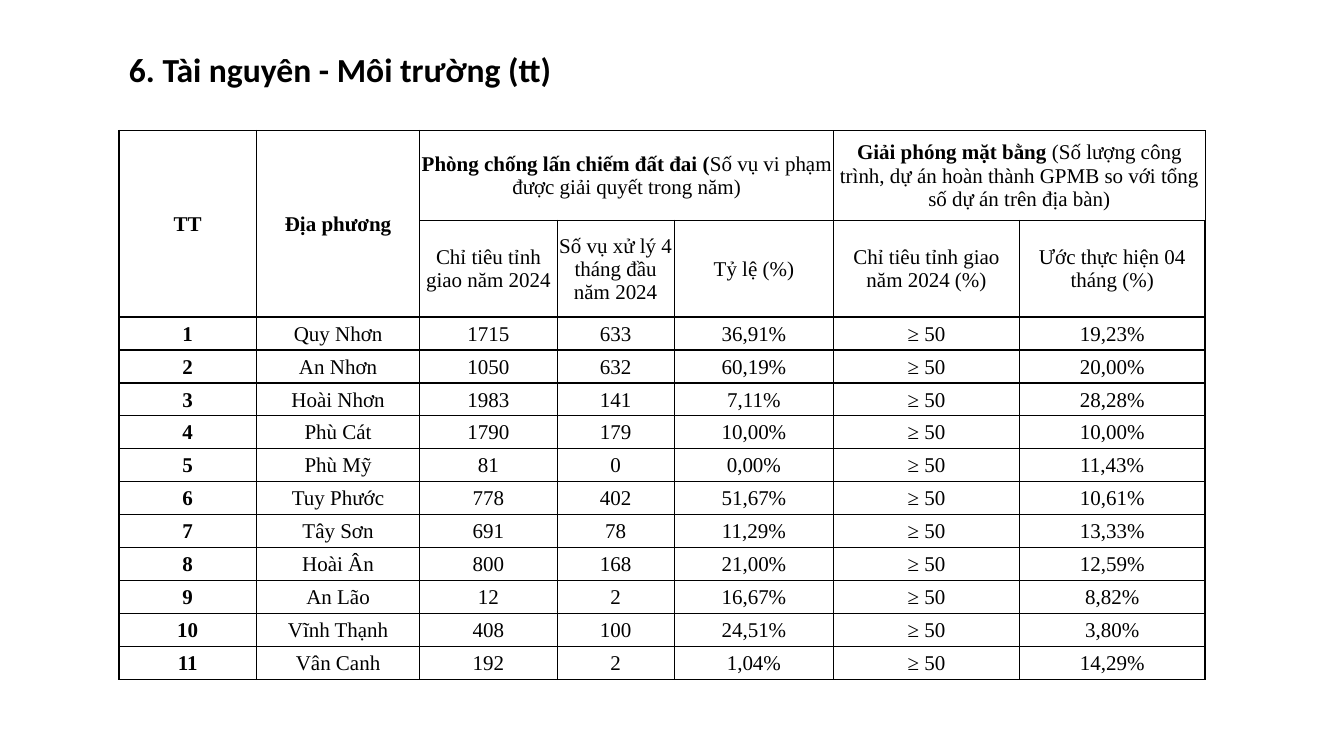
from lxml.etree import SubElement
from pptx import Presentation
from pptx.dml.color import RGBColor
from pptx.enum.text import MSO_ANCHOR as Anchor, MSO_AUTO_SIZE as AutoSize, PP_ALIGN as Align
from pptx.oxml.ns import qn
from pptx.util import Cm, Pt

COLUMN_WIDTHS = [3.46, 4.12, 3.46, 2.95, 4.02, 4.68, 4.68]
HEADER_HEIGHTS = [2.26, 2.44]
BODY_HEIGHT = 0.83
TARGET = "≥ 50"
LAND_COLUMN, CLEARANCE_COLUMN = 2, 5

# (row, column, rows spanned, columns spanned, bold text, regular text)
HEADERS = [
    (0, 0, 2, 1, "TT", ""),
    (0, 1, 2, 1, "Địa phương", ""),
    (0, LAND_COLUMN, 1, 3, "Phòng chống lấn chiếm đất đai (",
     "Số vụ vi phạm được giải quyết trong năm)"),
    (0, CLEARANCE_COLUMN, 1, 2, "Giải phóng mặt bằng ",
     "(Số lượng công trình, dự án hoàn thành GPMB so với tổng số dự án trên địa bàn)"),
    (1, 2, 1, 1, "", "Chỉ tiêu tỉnh giao năm 2024"),
    (1, 3, 1, 1, "", "Số vụ xử lý 4 tháng đầu năm 2024"),
    (1, 4, 1, 1, "", "Tỷ lệ (%)"),
    (1, 5, 1, 1, "", "Chỉ tiêu tỉnh giao năm 2024 (%)"),
    (1, 6, 1, 1, "", "Ước thực hiện 04 tháng (%)"),
]

# locality, cases assigned, cases handled, share handled, clearance achieved
LOCALITIES = [
    ("Quy Nhơn", "1715", "633", "36,91%", "19,23%"),
    ("An Nhơn", "1050", "632", "60,19%", "20,00%"),
    ("Hoài Nhơn", "1983", "141", "7,11%", "28,28%"),
    ("Phù Cát", "1790", "179", "10,00%", "10,00%"),
    ("Phù Mỹ", "81", "0", "0,00%", "11,43%"),
    ("Tuy Phước", "778", "402", "51,67%", "10,61%"),
    ("Tây Sơn", "691", "78", "11,29%", "13,33%"),
    ("Hoài Ân", "800", "168", "21,00%", "12,59%"),
    ("An Lão", "12", "2", "16,67%", "8,82%"),
    ("Vĩnh Thạnh", "408", "100", "24,51%", "3,80%"),
    ("Vân Canh", "192", "2", "1,04%", "14,29%"),
]


def color(value):
    return RGBColor.from_string(value)


def add_text(paragraph, text, *, font, size, ink, bold=False):
    run = paragraph.add_run()
    run.text = text
    run.font.name = font
    run.font.size = Pt(size)
    run.font.bold = bold
    run.font.color.rgb = color(ink)


def thin_sides(row, column):
    """Sides of a cell that touch the lighter frame of the clearance heading."""
    if row == 0 and column >= CLEARANCE_COLUMN:
        return "LRTB"
    if row == 0 and column >= LAND_COLUMN:
        return "R"
    if row == 1 and column >= CLEARANCE_COLUMN:
        return "T"
    return ""


class SlideBuilder:
    title_font = "Calibri"
    table_font = "Times New Roman"
    ink = "000000"
    paper = "FFFFFF"

    def __init__(self, slide):
        self.slide = slide

    def title(self, text, left, top, width, height):
        shape = self.slide.shapes.add_textbox(Cm(left), Cm(top), Cm(width), Cm(height))
        frame = shape.text_frame
        frame.word_wrap = True
        frame.auto_size = AutoSize.SHAPE_TO_FIT_TEXT
        add_text(frame.paragraphs[0], text, font=self.title_font, size=24,
                 ink=self.ink, bold=True)

    def table(self, left, top, widths, heights):
        shape = self.slide.shapes.add_table(
            len(heights), len(widths), Cm(left), Cm(top), Cm(sum(widths)), Cm(sum(heights)))
        table = shape.table
        table.first_row = table.horz_banding = False
        for column, width in zip(table.columns, widths):
            column.width = Cm(width)
        for row_index, (row, height) in enumerate(zip(table.rows, heights)):
            row.height = Cm(height)
            for column_index, cell in enumerate(row.cells):
                self.style_cell(cell, thin_sides(row_index, column_index))
        return table

    def style_cell(self, cell, thin):
        properties = cell._tc.get_or_add_tcPr()
        for side in "LRTB":
            width = Pt(0.5 if side in thin else 1)
            line = SubElement(properties, qn(f"a:ln{side}"), w=str(width))
            fill = SubElement(line, qn("a:solidFill"))
            SubElement(fill, qn("a:srgbClr"), val=self.ink)
        cell.fill.solid()
        cell.fill.fore_color.rgb = color(self.paper)
        cell.margin_left = cell.margin_right = cell.margin_top = Cm(0.03)
        cell.margin_bottom = 0
        cell.vertical_anchor = Anchor.MIDDLE

    def cell_text(self, cell, bold_text="", regular_text=""):
        paragraph = cell.text_frame.paragraphs[0]
        paragraph.alignment = Align.CENTER
        for text, bold in ((bold_text, True), (regular_text, False)):
            if text:
                add_text(paragraph, text, font=self.table_font, size=15,
                         ink=self.ink, bold=bold)


def main():
    presentation = Presentation()
    presentation.slide_width = Cm(33.87)
    presentation.slide_height = Cm(19.05)
    builder = SlideBuilder(presentation.slides.add_slide(presentation.slide_layouts[6]))

    builder.title("6. Tài nguyên - Môi trường (tt)", 3, 1.12, 12.7, 1.28)
    heights = HEADER_HEIGHTS + [BODY_HEIGHT] * len(LOCALITIES)
    table = builder.table(3, 3.29, COLUMN_WIDTHS, heights)

    for row, column, row_span, column_span, bold_text, regular_text in HEADERS:
        cell = table.cell(row, column)
        if row_span * column_span > 1:
            cell.merge(table.cell(row + row_span - 1, column + column_span - 1))
        builder.cell_text(cell, bold_text, regular_text)

    for number, (*land_values, clearance) in enumerate(LOCALITIES, start=1):
        row = number + len(HEADER_HEIGHTS) - 1
        builder.cell_text(table.cell(row, 0), bold_text=str(number))
        for column, value in enumerate([*land_values, TARGET, clearance], start=1):
            builder.cell_text(table.cell(row, column), regular_text=value)

    presentation.save("out.pptx")


if __name__ == "__main__":
    main()
